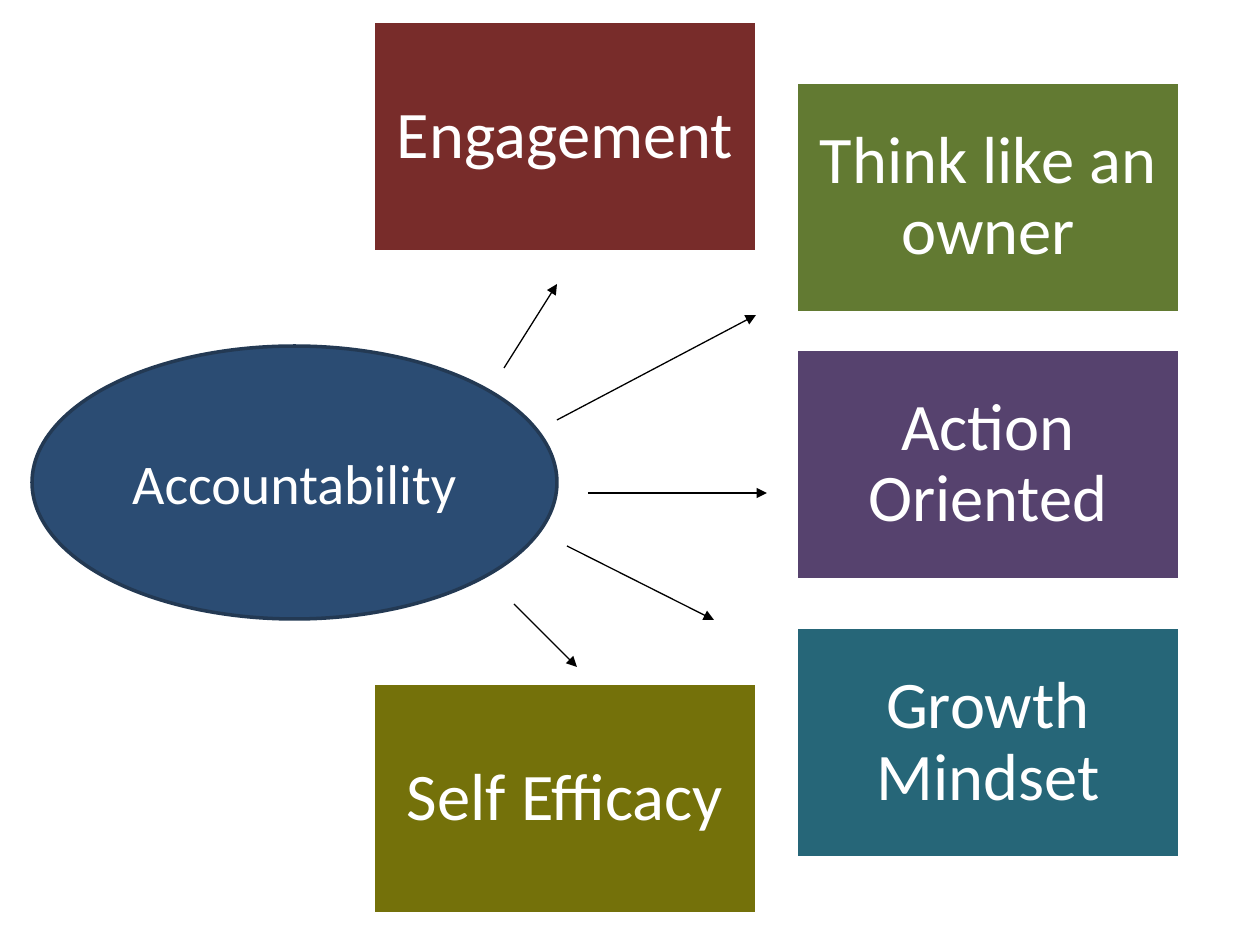
from lxml import etree
from pptx import Presentation
from pptx.dml.color import RGBColor
from pptx.enum.shapes import MSO_CONNECTOR, MSO_SHAPE
from pptx.enum.text import MSO_ANCHOR, PP_ALIGN
from pptx.oxml.ns import qn
from pptx.util import Pt

RECT, OVAL = MSO_SHAPE.RECTANGLE, MSO_SHAPE.OVAL
STRAIGHT = MSO_CONNECTOR.STRAIGHT
MIDDLE, CENTER = MSO_ANCHOR.MIDDLE, PP_ALIGN.CENTER
PX = 914400 / 126

HUB = ("Accountability", 32, 346, 525, 273)
BOX_W, BOX_H, BOX_INSET = 384, 231, 20
INNER_X, OUTER_X = 373, 796
BOXES = [
    ("Engagement", INNER_X, 21, "782C2A"),
    ("Think like an owner", OUTER_X, 82, "627A32"),
    ("Action Oriented", OUTER_X, 349, "56426E"),
    ("Growth Mindset", OUTER_X, 627, "266678"),
    ("Self Efficacy", INNER_X, 683, "74710A"),
]
ARROWS = [
    (504, 368, 557, 284),
    (557, 420, 756, 315),
    (588, 493, 767, 493),
    (514, 604, 577, 667),
    (567, 546, 714, 620),
]


def px(n):
    return round(n * PX)


def color(value):
    return RGBColor.from_string(value)


def add_label(s, kind, text, x, y, w, h, fill, line, size, inset=None, spacing=None):
    sp = s.shapes.add_shape(kind, px(x), px(y), px(w), px(h))
    sp.shadow.inherit = False
    sp.fill.solid()
    sp.fill.fore_color.rgb = color(fill)
    sp.line.color.rgb = color(line)
    sp.line.width = Pt(2)
    tf = sp.text_frame
    tf.word_wrap = True
    tf.vertical_anchor = MIDDLE
    if inset:
        for side in ("left", "top", "right", "bottom"):
            setattr(tf, f"margin_{side}", px(inset))
    p = tf.paragraphs[0]
    p.alignment = CENTER
    p.line_spacing = spacing
    r = p.add_run()
    r.text = text
    for name, value in {"name": "Calibri", "size": Pt(size)}.items():
        setattr(r.font, name, value)
    r.font.color.rgb = color("FFFFFF")


def add_arrow(s, ends):
    line = s.shapes.add_connector(STRAIGHT, *map(px, ends))
    line.line.color.rgb = color("000000")
    line.line.width = Pt(0.75)
    etree.SubElement(line.line._get_or_add_ln(), qn("a:tailEnd"), type="triangle")
    etree.SubElement(line._element.spPr, qn("a:effectLst"))


def main():
    prs = Presentation()
    prs.slide_width, prs.slide_height = px(1260), px(945)
    s = prs.slides.add_slide(prs.slide_layouts[6])
    text, *place = HUB
    add_label(s, OVAL, text, *place, "2B4C73", "233953", 32)
    for text, x, y, fill in BOXES:
        add_label(s, RECT, text, x, y, BOX_W, BOX_H, fill, "FFFFFF", 38, BOX_INSET, 0.9)
    for ends in ARROWS:
        add_arrow(s, ends)
    prs.save("out.pptx")


if __name__ == "__main__":
    main()
